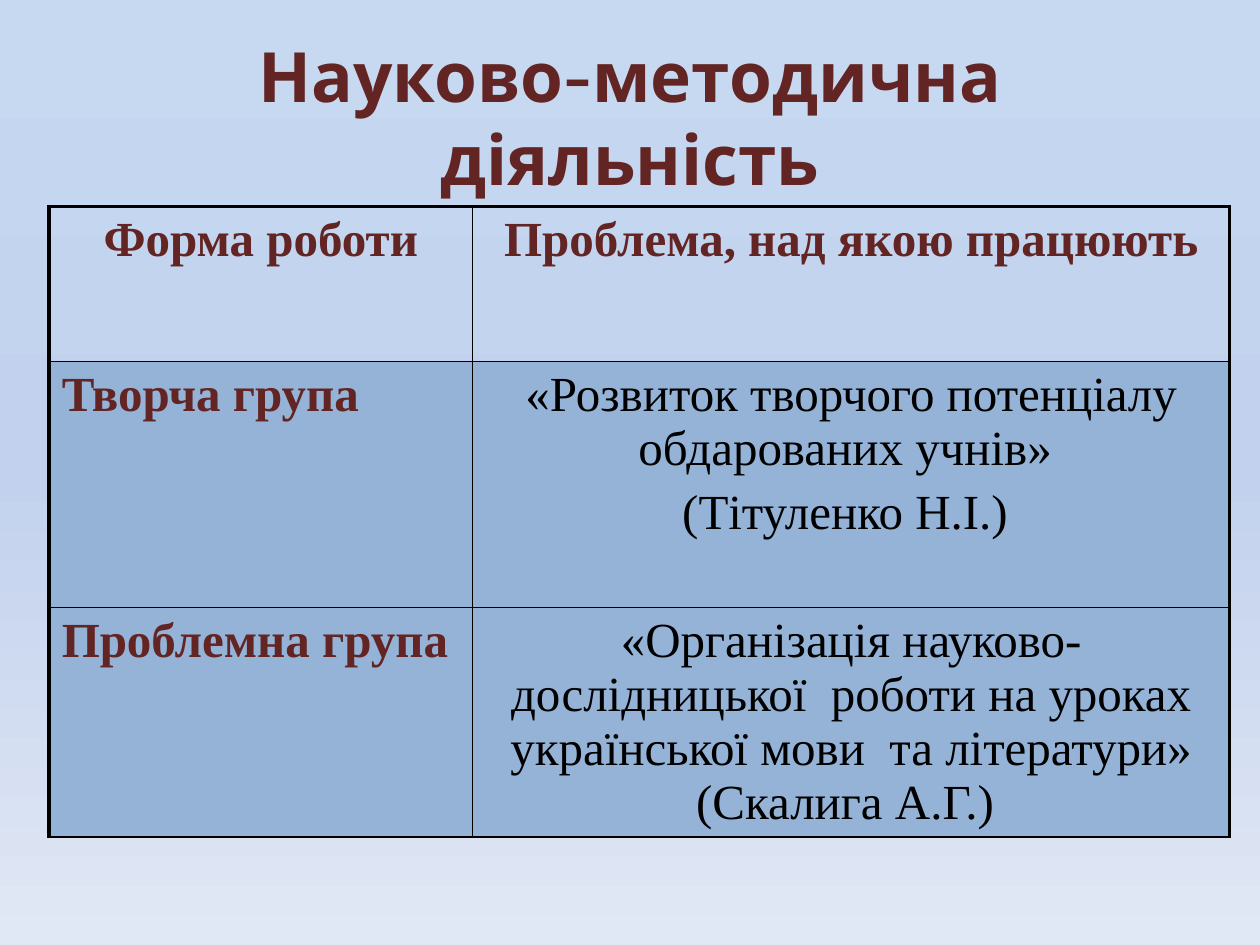
import copy

import pptx
import pptx.dml.color
import pptx.enum.text
import pptx.oxml
import pptx.oxml.ns
import pptx.util

Inches = pptx.util.Inches
Pt = pptx.util.Pt
Align = pptx.enum.text.PP_ALIGN

MAROON = "632523"
BLACK = "000000"
CELL_BLUE = "95B3D7"
BACKGROUND = [(0, "C6D9F1"), (0.5, "C2D1ED"), (1, "E1E8F5")]
COLUMNS = [3.36, 6.01]
ROWS = [1.23, 1.95, 1.66]
CELLS = [
    [["Форма роботи"], ["Проблема, над якою працюють"]],
    [["Творча група"],
     ["«Розвиток творчого потенціалу обдарованих учнів» ", "(Тітуленко Н.І.) "]],
    [["Проблемна група"],
     ["«Організація науково-дослідницької  роботи на уроках "
      "української мови  та літератури» (Скалига А.Г.) "]],
]


def color(value):
    return pptx.dml.color.RGBColor.from_string(value)


def style(para, font, size, value, bold, align):
    para.alignment = align
    para.font.name = font
    para.font.size = Pt(size)
    para.font.color.rgb = color(value)
    para.font.bold = bold


def paint_background(page):
    fill = page.background.fill
    fill.gradient()
    fill.gradient_angle = 270
    first = page._element.xpath(".//a:gsLst/a:gs")[0]
    first.addnext(copy.deepcopy(first))
    for stop, (position, value) in zip(fill.gradient_stops, BACKGROUND):
        stop.position = position
        stop.color.rgb = color(value)


def place_title(page, left, top, width, height):
    title = page.shapes.title
    title.left, title.top = Inches(left), Inches(top)
    title.width, title.height = Inches(width), Inches(height)
    frame = title.text_frame
    frame.text = "Науково-методична діяльність"
    frame.word_wrap = True
    frame.auto_size = pptx.enum.text.MSO_AUTO_SIZE.NONE
    frame.vertical_anchor = pptx.enum.text.MSO_ANCHOR.MIDDLE
    style(frame.paragraphs[0], "Cabin", 39.6, MAROON, True, Align.CENTER)


def draw_borders(cell, widths):
    properties = cell._tc.get_or_add_tcPr()
    for index, (side, width) in enumerate(zip("LRTB", widths)):
        line = pptx.oxml.parse_xml(
            f'<a:ln{side} {pptx.oxml.ns.nsdecls("a")} w="{Pt(width)}">'
            f'<a:solidFill><a:srgbClr val="{BLACK}"/></a:solidFill></a:ln{side}>')
        properties.insert(index, line)


def fill_cell(cell, texts, row, column):
    is_header = row == 0
    is_label = column == 0
    if is_header:
        cell.fill.background()
    else:
        cell.fill.solid()
        cell.fill.fore_color.rgb = color(CELL_BLUE)
    cell.text = "\n".join(texts)
    bold = is_header or is_label
    align = Align.LEFT if is_label and not is_header else Align.CENTER
    for index, para in enumerate(cell.text_frame.paragraphs):
        style(para, "Times New Roman", 28, MAROON if bold else BLACK, bold, align)
        if index:
            para.space_before = Pt(5.6)
    draw_borders(cell, [2.25 if is_label else 1, 1 if is_label else 2.25,
                        2.25 if is_header else 1, 1])


def place_table(page, left, top):
    frame = page.shapes.add_table(
        len(ROWS), len(COLUMNS), Inches(left), Inches(top),
        Inches(sum(COLUMNS)), Inches(sum(ROWS)))
    table = frame.table
    table.first_row = False
    table.horz_banding = False
    for column, width in zip(table.columns, COLUMNS):
        column.width = Inches(width)
    for row, height in zip(table.rows, ROWS):
        row.height = Inches(height)
    for row, line in enumerate(CELLS):
        for column, texts in enumerate(line):
            fill_cell(table.cell(row, column), texts, row, column)


def main():
    deck = pptx.Presentation()
    deck.slide_width, deck.slide_height = Inches(10), Inches(7.5)
    page = deck.slides.add_slide(deck.slide_layouts.get_by_name("Title Only"))
    paint_background(page)
    place_title(page, 0.5, 0.3, 9, 1.25)
    place_table(page, 0.39, 1.64)
    deck.save("out.pptx")


if __name__ == "__main__":
    main()
